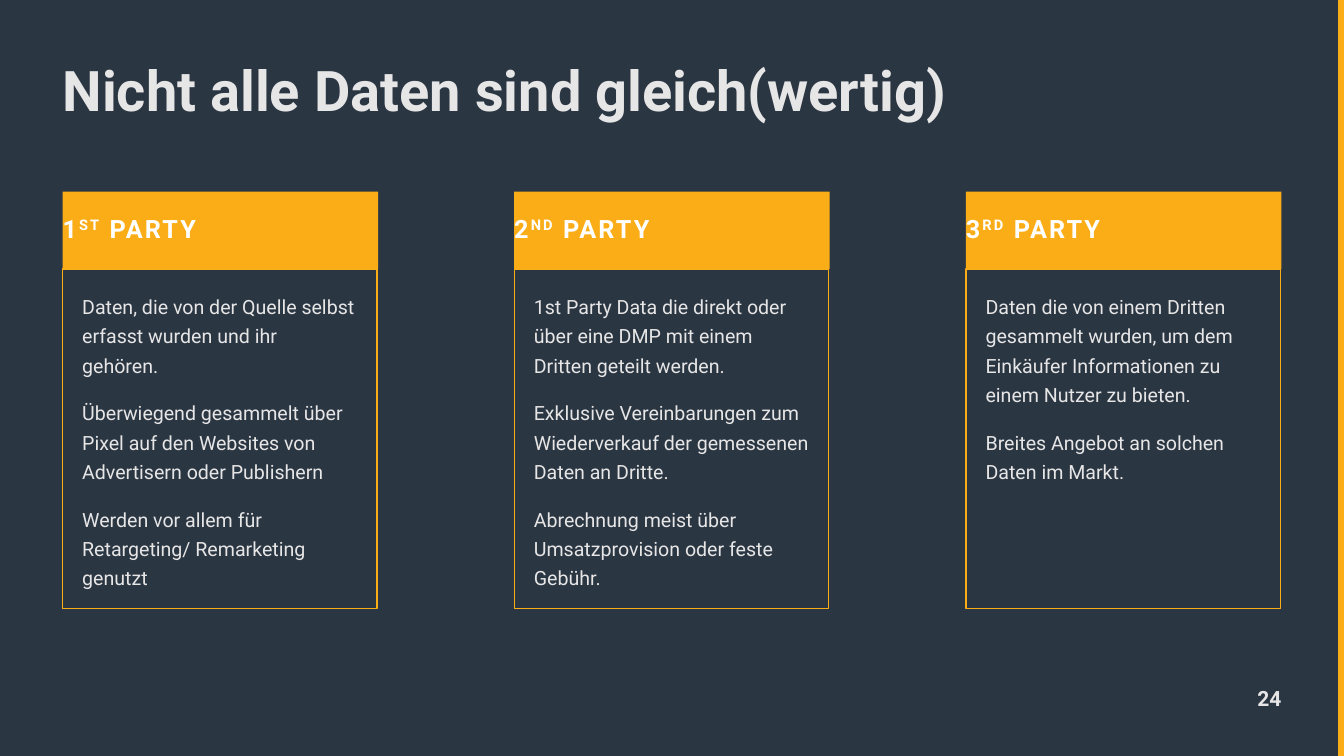
"""Build the slide that compares first, second and third party data."""
import pptx
import pptx.dml.color
import pptx.enum.shapes
import pptx.enum.text
import pptx.oxml.ns
import pptx.util
from lxml import etree

Inches = pptx.util.Inches
Pt = pptx.util.Pt
ANCHOR = pptx.enum.text.MSO_ANCHOR
ALIGN = pptx.enum.text.PP_ALIGN

NAVY = pptx.dml.color.RGBColor(0x2B, 0x36, 0x43)
AMBER = pptx.dml.color.RGBColor(0xFB, 0xAD, 0x18)
PALE = pptx.dml.color.RGBColor(0xE7, 0xE6, 0xE6)
WHITE = pptx.dml.color.RGBColor(0xFF, 0xFF, 0xFF)

LEFT, COLUMN_STEP = 1.24, 8.96
HEADER_TOP, HEADER_WIDTH, HEADER_HEIGHT = 3.8, 6.26, 1.54
LIST_WIDTH, LIST_HEIGHT = 6.24, 6.73

COLUMNS = [
    ("1", "ST", [
        "Daten, die von der Quelle selbst erfasst wurden und ihr gehören.",
        "Überwiegend gesammelt über Pixel auf den Websites von Advertisern oder Publishern",
        "Werden vor allem für Retargeting/ Remarketing genutzt",
    ]),
    ("2", "ND", [
        "1st Party Data die direkt oder über eine DMP mit einem Dritten geteilt werden.",
        "Exklusive Vereinbarungen zum Wiederverkauf der gemessenen Daten an Dritte.",
        "Abrechnung meist über Umsatzprovision oder feste Gebühr.",
    ]),
    ("3", "RD", [
        "Daten die von einem Dritten gesammelt wurden, um dem Einkäufer Informationen zu einem Nutzer zu bieten.",
        "Breites Angebot an solchen Daten im Markt.",
    ]),
]


def apply(target, values):
    for name, value in values.items():
        setattr(target, name, value)


class SlideBuilder:
    """Hold the text style and the current slide, and add its elements."""

    def __init__(self, slide, font_name):
        self.slide = slide
        self.font_name = font_name
        slide.background.fill.solid()
        slide.background.fill.fore_color.rgb = NAVY

    def style(self, target, size, color, bold=False):
        apply(target.font, {"name": self.font_name, "size": Pt(size), "bold": bold})
        target.font.color.rgb = color

    def place(self, box, left, top, width, height):
        apply(box, {"left": Inches(left), "top": Inches(top),
                    "width": Inches(width), "height": Inches(height)})

    def frame(self, box, anchor=ANCHOR.TOP, inset=0):
        sides = ("margin_left", "margin_top", "margin_right", "margin_bottom")
        apply(box.text_frame, {
            "word_wrap": True,
            "auto_size": pptx.enum.text.MSO_AUTO_SIZE.NONE,
            "vertical_anchor": anchor,
            **{side: Inches(inset) for side in sides},
        })
        return box.text_frame

    def title(self, text):
        box = self.slide.shapes.title
        self.place(box, LEFT, 1.24, 23, 1.21)
        para = self.frame(box).paragraphs[0]
        apply(para, {"text": text, "alignment": ALIGN.LEFT,
                     "line_spacing": Pt(86), "space_before": Pt(0)})
        self.style(para, 80, PALE, bold=True)

    def header(self, left, number, suffix):
        box = self.slide.shapes.add_shape(
            pptx.enum.shapes.MSO_SHAPE.RECTANGLE, Inches(left), Inches(HEADER_TOP),
            Inches(HEADER_WIDTH), Inches(HEADER_HEIGHT))
        box.shadow.inherit = False
        box.fill.solid()
        box.fill.fore_color.rgb = AMBER
        box.line.fill.background()
        para = self.frame(box, ANCHOR.MIDDLE).paragraphs[0]
        apply(para, {"alignment": ALIGN.LEFT, "line_spacing": 0.9})
        for text, baseline in ((number, 0), (suffix, 30000), (" PARTY", 0)):
            span = para.add_run()
            span.text = text
            self.style(span, 36, WHITE, bold=True)
            properties = span.font._element
            properties.set("spc", "300")
            properties.set("baseline", str(baseline))

    def text_list(self, box, left, lines):
        self.place(box, left, HEADER_TOP + HEADER_HEIGHT, LIST_WIDTH, LIST_HEIGHT)
        box.line.color.rgb = AMBER
        box.line.width = Pt(2)
        text_frame = self.frame(box, inset=0.39)
        text_frame.text = "\n".join(lines)
        for index, para in enumerate(text_frame.paragraphs):
            apply(para, {"alignment": ALIGN.LEFT, "line_spacing": Pt(42),
                         "space_before": Pt(20 if index else 0), "space_after": Pt(6)})
            properties = para._p.get_or_add_pPr()
            properties.set("marL", "0")
            properties.set("indent", "0")
            etree.SubElement(properties, pptx.oxml.ns.qn("a:buNone"))
            self.style(para, 28, PALE)

    def edge_line(self, x, height):
        line = self.slide.shapes.add_connector(
            pptx.enum.shapes.MSO_CONNECTOR.STRAIGHT,
            Inches(x), Inches(0), Inches(x), Inches(height))
        line.line.color.rgb = AMBER
        line.line.width = Pt(9)
        etree.SubElement(line._element.spPr, pptx.oxml.ns.qn("a:effectLst"))

    def page_number(self, text):
        box = self.slide.shapes.add_textbox(
            Inches(23.14), Inches(13.6), Inches(2.28), Inches(0.51))
        para = self.frame(box, ANCHOR.BOTTOM).paragraphs[0]
        apply(para, {"text": text, "alignment": ALIGN.RIGHT})
        self.style(para, 30, PALE, bold=True)


def main():
    deck = pptx.Presentation()
    apply(deck, {"slide_width": Inches(26.66), "slide_height": Inches(15)})
    comparison_layout = deck.slide_layouts[4]
    slide = deck.slides.add_slide(comparison_layout)
    builder = SlideBuilder(slide, "Roboto")
    builder.edge_line(26.61, 15)
    builder.title("Nicht alle Daten sind gleich(wertig)")
    *list_boxes, spare_box = list(slide.placeholders)[1:]
    spare_box._element.getparent().remove(spare_box._element)
    for index, (box, (number, suffix, lines)) in enumerate(zip(list_boxes, COLUMNS)):
        left = LEFT + index * COLUMN_STEP
        builder.header(left, number, suffix)
        builder.text_list(box, left, lines)
    builder.page_number("24")
    deck.save("out.pptx")


if __name__ == "__main__":
    main()
